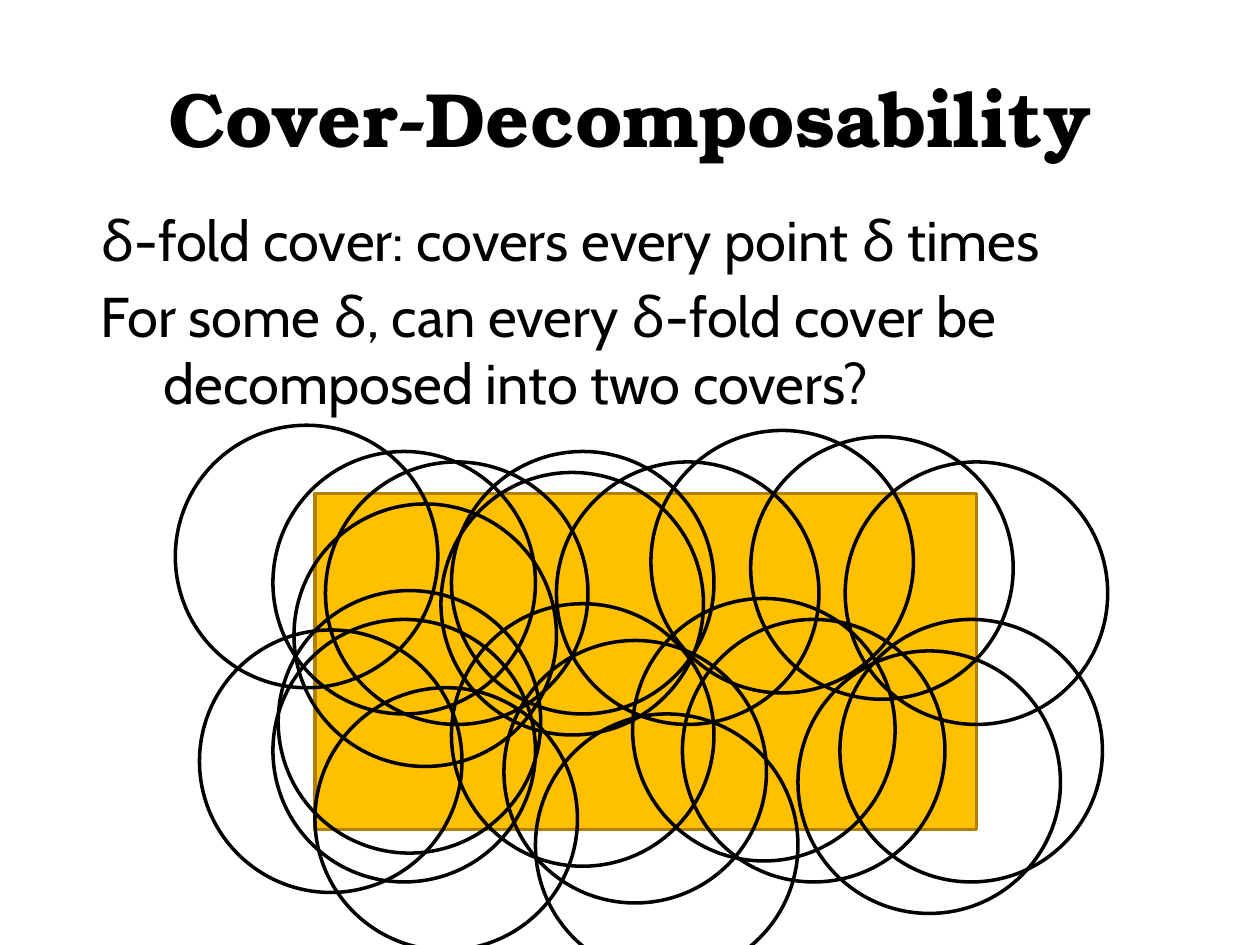
import pptx
import pptx.util
import pptx.dml.color
import pptx.enum.lang
import pptx.enum.shapes
import pptx.enum.text

RGBColor = pptx.dml.color.RGBColor
BLACK = RGBColor(0x00, 0x00, 0x00)
AMBER = RGBColor(0xFF, 0xC0, 0x00)
BROWN = RGBColor(0xB2, 0x80, 0x00)

ENGLISH = pptx.enum.lang.MSO_LANGUAGE_ID.ENGLISH_US
GREEK = pptx.enum.lang.MSO_LANGUAGE_ID.GREEK

COLUMNS, ROWS = 120, 90
DISC_SIZE = 25
DISC_CORNERS = [
    (26, 43), (31, 44), (28, 48), (42, 45), (53, 44), (43, 43), (26.5, 56.25),
    (30, 65.5), (43, 57.5), (48, 61), (76, 62), (62, 41), (71.5, 41.6),
    (60.25, 57), (65, 59), (51, 68), (80.5, 44), (80, 59), (16.7, 40.5),
    (19, 60), (26, 59),
]
STATEMENTS = [
    ["δ", "-fold cover: covers every point ", "δ", " times"],
    ["For some ", "δ", ", can every ", "δ",
     "-fold cover be decomposed into two covers?"],
]


class SlideBuilder:
    title_font = "TeX Gyre Bonum"
    body_font = "Cabin"
    line_width = pptx.util.Pt(2)

    def __init__(self, deck):
        self.slide = deck.slides.add_slide(deck.slide_layouts[6])
        self.column = deck.slide_width / COLUMNS
        self.row = deck.slide_height / ROWS

    def place(self, left, top, width, height):
        return (round(left * self.column), round(top * self.row),
                round(width * self.column), round(height * self.row))

    def text_frame(self, box, anchor):
        frame = self.slide.shapes.add_textbox(*self.place(*box)).text_frame
        frame.word_wrap = True
        frame.vertical_anchor = anchor
        return frame

    def run(self, paragraph, text, font, size, bold=False):
        run = paragraph.add_run()
        run.text = text
        run.font.name = font
        run.font.size = pptx.util.Pt(size)
        run.font.bold = bold
        run.font.color.rgb = BLACK
        run.font.language_id = GREEK if text == "δ" else ENGLISH

    def title(self, text, box):
        frame = self.text_frame(box, pptx.enum.text.MSO_ANCHOR.MIDDLE)
        heading = frame.paragraphs[0]
        heading.alignment = pptx.enum.text.PP_ALIGN.CENTER
        self.run(heading, text, self.title_font, 44, bold=True)

    def body(self, statements, box):
        frame = self.text_frame(box, pptx.enum.text.MSO_ANCHOR.TOP)
        for index, parts in enumerate(statements):
            statement = frame.add_paragraph() if index else frame.paragraphs[0]
            statement.space_before = pptx.util.Pt(5)
            properties = statement._p.get_or_add_pPr()
            properties.set("marL", str(pptx.util.Inches(0.7)))
            properties.set("indent", str(pptx.util.Inches(-0.5)))
            for part in parts:
                self.run(statement, part, self.body_font, 32)

    def outline(self, kind, box, color):
        figure = self.slide.shapes.add_shape(kind, *self.place(*box))
        figure.shadow.inherit = False
        figure.line.color.rgb = color
        figure.line.width = self.line_width
        return figure

    def region(self, box):
        area = self.outline(pptx.enum.shapes.MSO_SHAPE.RECTANGLE, box, BROWN)
        area.fill.solid()
        area.fill.fore_color.rgb = AMBER

    def disc(self, left, top):
        box = (left, top, DISC_SIZE, DISC_SIZE)
        disc = self.outline(pptx.enum.shapes.MSO_SHAPE.OVAL, box, BLACK)
        disc.fill.background()


def main():
    deck = pptx.Presentation()
    deck.slide_width = pptx.util.Inches(10)
    deck.slide_height = pptx.util.Inches(7.5)
    builder = SlideBuilder(deck)
    builder.title("Cover-Decomposability", (6, 3.6, 108, 15))
    builder.body(STATEMENTS, (6, 19, 114, 68))
    builder.region((30, 47, 63, 32))
    for left, top in DISC_CORNERS:
        builder.disc(left, top)
    deck.save("out.pptx")


if __name__ == "__main__":
    main()
